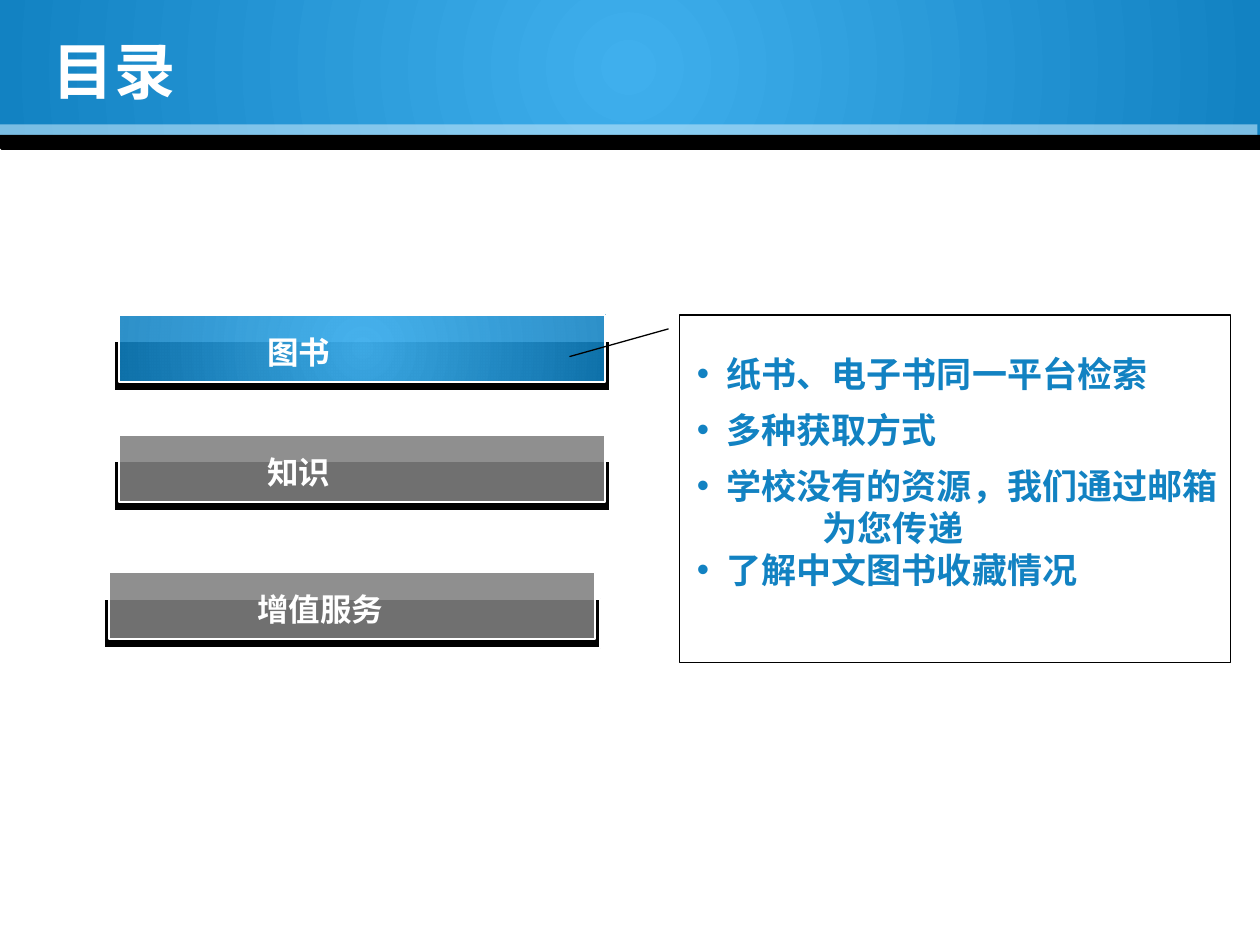
from dataclasses import dataclass

from lxml import etree
from pptx import Presentation
from pptx.dml.color import RGBColor
from pptx.enum.shapes import MSO_SHAPE
from pptx.enum.text import MSO_ANCHOR, PP_ALIGN
from pptx.oxml import parse_xml
from pptx.oxml.ns import nsdecls, qn
from pptx.util import Cm, Pt

RECTANGLE = MSO_SHAPE.RECTANGLE
SNIPPED = MSO_SHAPE.SNIP_1_RECTANGLE
CALLOUT = MSO_SHAPE.LINE_CALLOUT_1
MIDDLE, TOP = MSO_ANCHOR.MIDDLE, MSO_ANCHOR.TOP
LEFT = PP_ALIGN.LEFT
TITLE_ONLY = 5


@dataclass(frozen=True)
class Theme:
    white: str = "FFFFFF"
    black: str = "000000"
    blue: str = "1282C2"
    glow: str = "3FAFED"
    pale: str = "BAE2F8"
    grey: str = "808080"
    heading_font: str = "Noto Sans CJK SC"
    label_font: str = "Calibri"
    title_size: int = 35
    point_size: int = 20
    label_size: int = 18


class ContentsPage:
    """Draws styled elements on one slide."""

    def __init__(self, page, theme):
        self.page = page
        self.theme = theme

    def set_alpha(self, colour, percent):
        if percent < 100:
            etree.SubElement(colour, qn("a:alpha"), val=str(percent * 1000))

    def solid(self, shape, colour, alpha=100):
        shape.fill.solid()
        shape.fill.fore_color.rgb = RGBColor.from_string(colour)
        self.set_alpha(shape.element.spPr.find(qn("a:solidFill"))[0], alpha)

    def radial(self, shape, alphas=(100, 100)):
        shape.fill.gradient()
        gradient = shape.element.spPr.find(qn("a:gradFill"))
        colours = (self.theme.glow, self.theme.blue)
        for stop, colour in zip(shape.fill.gradient_stops, colours):
            stop.color.rgb = RGBColor.from_string(colour)
        for stop, alpha in zip(gradient.iter(qn("a:gs")), alphas):
            self.set_alpha(stop[0], alpha)
        centre = parse_xml(
            f'<a:path {nsdecls("a")} path="circle">'
            '<a:fillToRect l="50000" t="50000" r="50000" b="50000"/></a:path>'
        )
        gradient.replace(gradient.find(qn("a:lin")), centre)

    def shape(self, kind, left, top, width, height, line=None, weight=1):
        shape = self.page.shapes.add_shape(kind, Cm(left), Cm(top), Cm(width), Cm(height))
        shape.shadow.inherit = False
        if line:
            shape.line.color.rgb = RGBColor.from_string(line)
            shape.line.width = Pt(weight)
        else:
            shape.line.fill.background()
        return shape

    def add_span(self, para, text, size, font, colour):
        span = para.add_run()
        span.text = text
        values = {"size": Pt(size), "name": font, "bold": True}
        for name, value in values.items():
            setattr(span.font, name, value)
        span.font.color.rgb = RGBColor.from_string(colour)
        latin = span.font._element.find(qn("a:latin"))
        latin.addnext(latin.makeelement(qn("a:ea"), {"typeface": font}))
        para.alignment = LEFT

    def text_box(self, left, top, width, height):
        box = self.page.shapes.add_textbox(Cm(left), Cm(top), Cm(width), Cm(height))
        box.text_frame.word_wrap = True
        box.text_frame.vertical_anchor = TOP
        return box.text_frame

    def header(self):
        theme = self.theme
        self.radial(self.shape(RECTANGLE, -0.05, 0, 25.45, 2.72))
        self.solid(self.shape(RECTANGLE, -0.05, 2.51, 25.4, 0.21), theme.pale, 62)
        rule = self.shape(SNIPPED, -0.02, 2.72, 25.42, 0.3)
        rule.rotation = 180
        self.solid(rule, theme.black)

    def title(self, text):
        theme, title = self.theme, self.page.shapes.title
        places = {"left": 0.81, "top": 0.53, "width": 22.86, "height": 1.75}
        for name, value in places.items():
            setattr(title, name, Cm(value))
        title.text_frame.vertical_anchor = MIDDLE
        self.add_span(title.text_frame.paragraphs[0], text,
                      theme.title_size, theme.heading_font, theme.white)
        self.page.shapes.element.append(title.element)

    def bar(self, text, left, top, active=False):
        theme = self.theme
        base = self.shape(RECTANGLE, left - 0.1, top + 0.53, 10, 1, theme.white)
        self.solid(base, theme.black)
        face = self.shape(RECTANGLE, left, top, 9.8, 1.35, theme.white)
        if active:
            self.radial(face, (96, 88))
        else:
            self.solid(face, theme.grey, 88)
        frame = self.text_box(left + 2.74, top + 0.23, 4.32, 1.02)
        self.add_span(frame.paragraphs[0], text,
                      theme.label_size, theme.label_font, theme.white)

    def points(self, rows, left, top, width, height):
        theme = self.theme
        frame = self.text_box(left, top, width, height)
        for index, (text, bulleted, gap) in enumerate(rows):
            para = frame.add_paragraph() if index else frame.paragraphs[0]
            values = {"line_spacing": Pt(24), "space_after": Pt(gap)}
            for name, value in values.items():
                setattr(para, name, value)
            self.add_span(para, text, theme.point_size, theme.heading_font, theme.blue)
            properties = para._p.get_or_add_pPr()
            properties.set("marL", str(Cm(0.6 if bulleted else 2.54)))
            if bulleted:
                properties.set("indent", str(Cm(-0.6)))
                etree.SubElement(properties, qn("a:buFont"), typeface="Arial")
                etree.SubElement(properties, qn("a:buChar"), char="•")

    def callout(self, left, top, width, height, pointer):
        callout = self.shape(CALLOUT, left, top, width, height, self.theme.black, 0.75)
        callout.fill.background()
        for index, value in enumerate(pointer):
            callout.adjustments[index] = value


def main():
    deck = Presentation()
    deck.slide_width, deck.slide_height = Cm(25.4), Cm(19.05)
    page = deck.slides.add_slide(deck.slide_layouts[TITLE_ONLY])
    contents = ContentsPage(page, Theme())
    contents.header()
    contents.title("目录")
    contents.bar("图书", 2.4, 6.35, active=True)
    contents.bar("知识", 2.4, 8.77)
    contents.bar("增值服务", 2.2, 11.54)
    rows = [
        ("纸书、电子书同一平台检索", True, 8),
        ("多种获取方式", True, 8),
        ("学校没有的资源，我们通过邮箱", True, 0),
        ("为您传递", False, 0),
        ("了解中文图书收藏情况", True, 0),
    ]
    contents.points(rows, 13.8, 6.98, 11.3, 5.13)
    contents.callout(13.7, 6.35, 11.1, 7, (0.04, -0.02, 0.12, -0.2))
    deck.save("out.pptx")


if __name__ == "__main__":
    main()
